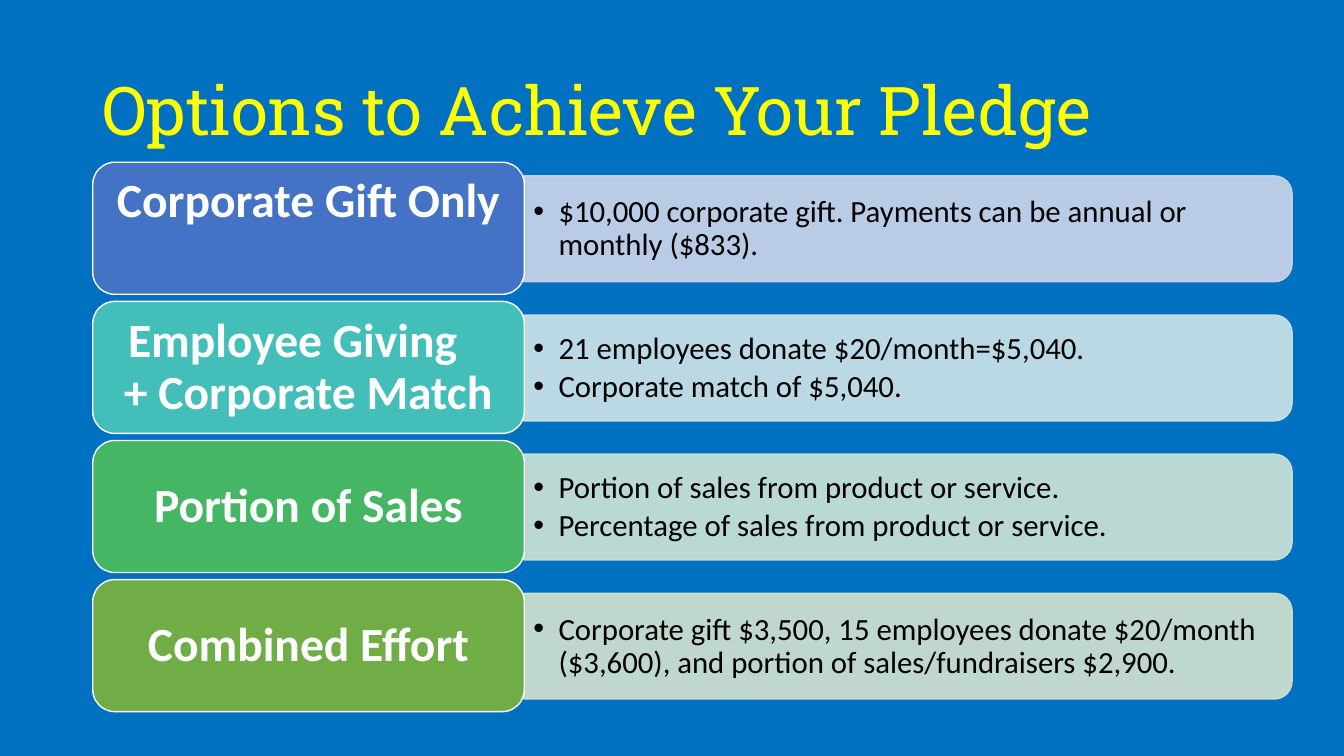
from pptx import Presentation
from pptx.dml.color import RGBColor as RGB
from pptx.enum.shapes import MSO_SHAPE as SHAPE
from pptx.enum.text import MSO_ANCHOR as ANCHOR, PP_ALIGN as ALIGN
from pptx.util import Pt
from lxml import etree

PX = 9144  # 100 px to the inch
NS = "{http://schemas.openxmlformats.org/drawingml/2006/main}"
COLORS = {"back": "0070C0", "title": "FFFF00", "white": "FFFFFF", "black": "000000"}

# label, bullets, label colour, bar colour
ROWS = [
    ("Corporate Gift Only",
     ["$10,000 corporate gift. Payments can be annual or monthly ($833)."],
     "4472C4", "CFD5EA"),
    ("Employee Giving\v+ Corporate Match",
     ["21 employees donate $20/month=$5,040.", "Corporate match of $5,040."],
     "43BEB9", "CFE5E8"),
    ("Portion of Sales",
     ["Portion of sales from product or service.",
      "Percentage of sales from product or service."],
     "45B664", "CFE5D8"),
    ("Combined Effort",
     ["Corporate gift $3,500, 15 employees donate $20/month ($3,600), "
      "and portion of sales/fundraisers $2,900."],
     "70AD47", "D5E3CF"),
]
PITCH = 138

deck = Presentation()
deck.slide_width, deck.slide_height = 1333 * PX, 750 * PX
slide = deck.slides.add_slide(deck.slide_layouts[6])
slide.background.fill.solid()
slide.background.fill.fore_color.rgb = RGB.from_string(COLORS["back"])


def write(lines, box, size, color, font="Calibri", bold=False, align=ALIGN.LEFT,
          anchor=ANCHOR.MIDDLE, pad=(10, 5), after=0, indent=(0, 0), bullet=None):
    frame = slide.shapes.add_textbox(*[n * PX for n in box]).text_frame
    frame.word_wrap = True
    frame.vertical_anchor = anchor
    frame.margin_left = frame.margin_right = pad[0] * PX
    frame.margin_top = frame.margin_bottom = pad[1] * PX
    frame.text = "\n".join(lines)
    for para in frame.paragraphs:
        para.alignment = align
        para.line_spacing = 0.9
        para.space_after = Pt(after)
        props = para._p.get_or_add_pPr()
        props.set("marL", str(indent[0] * PX))
        props.set("indent", str(indent[1] * PX))
        if bullet:
            etree.SubElement(props, NS + "buFont", typeface="Arial")
            etree.SubElement(props, NS + "buChar", char=bullet)
        for run in para.runs:
            run.font.name, run.font.size, run.font.bold = font, Pt(size), bold
            run.font.color.rgb = RGB.from_string(color)


def block(kind, box, fill, line, alpha=None):
    shape = slide.shapes.add_shape(kind, *[n * PX for n in box])
    shape.shadow.inherit = False
    shape.fill.solid()
    shape.fill.fore_color.rgb = RGB.from_string(fill)
    shape.line.color.rgb = RGB.from_string(line)
    shape.line.width = Pt(1)
    if alpha:
        for tint in shape._element.spPr.iter(NS + "srgbClr"):
            etree.SubElement(tint, NS + "alpha", val=str(alpha * 1000))
    return shape


# Title
write(["Options to Achieve Your Pledge"], (92, 40, 1150, 145), 48, COLORS["title"],
      font="Roboto Slab")

# Option rows: bar with bullets, then label block
for i, (label, points, dark, pale) in enumerate(ROWS):
    top = 161 + i * PITCH
    bar = block(SHAPE.ROUND_2_SAME_RECTANGLE, (848, top - 315, 105, 762), pale, pale, alpha=90)
    bar.rotation = 90
    write(points, (520, top + 19, 756, 95), 22, COLORS["black"], pad=(9, 5),
          after=3.3, indent=(25, -25), bullet="•")

    block(SHAPE.ROUNDED_RECTANGLE, (92, top, 428, 131), dark, COLORS["white"])
    # The first label sits high; the two-line label has its first line set in
    split = "\v" in label
    write([label], (98, top + 7, 416, 118), 34, COLORS["white"], bold=True, pad=(14, 7),
          align=ALIGN.LEFT if split else ALIGN.CENTER,
          anchor=ANCHOR.MIDDLE if i else ANCHOR.TOP,
          indent=(11, 4) if split else (0, 0))

deck.save("out.pptx")
